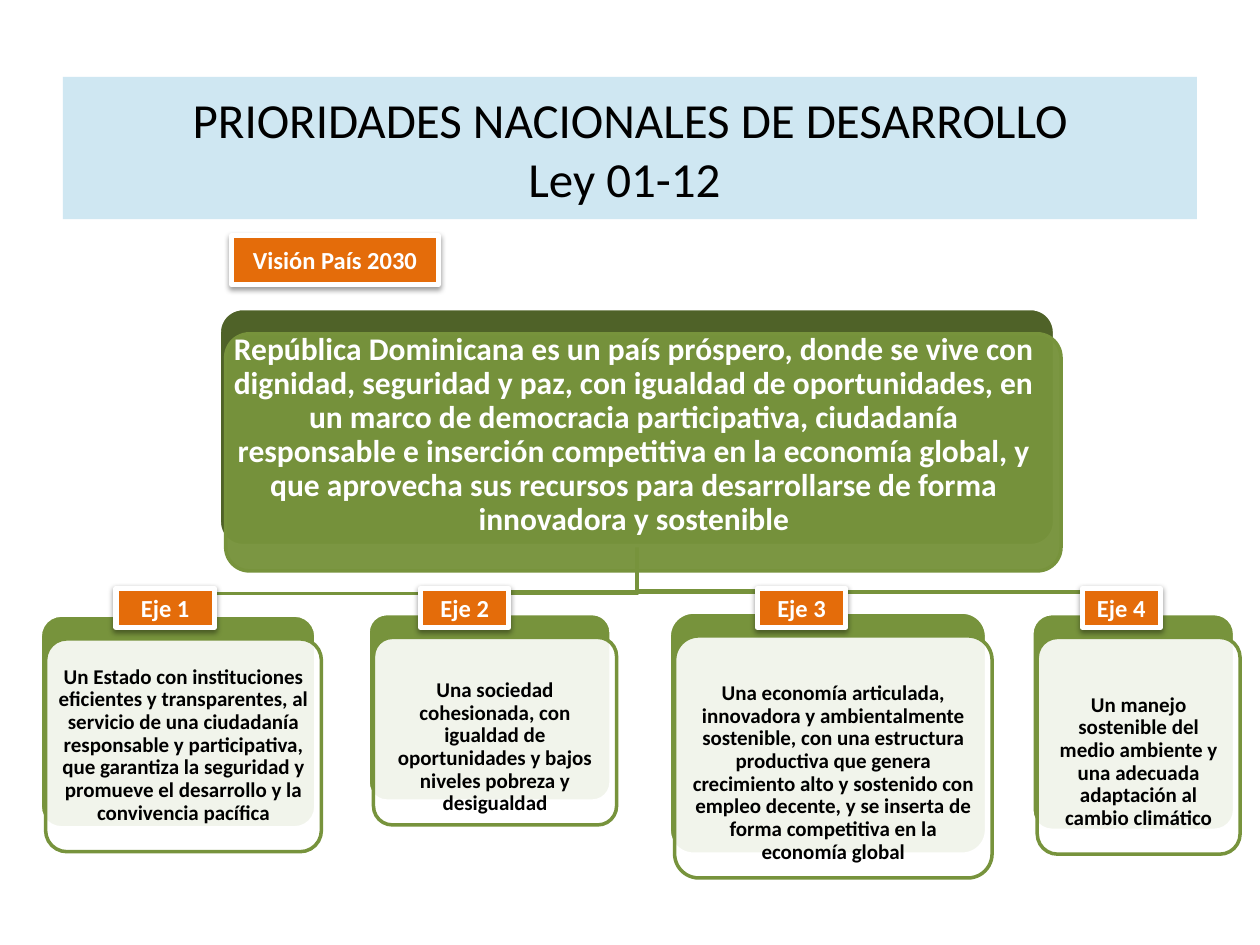
import lxml.etree
import pptx
import pptx.dml.color
import pptx.enum.shapes
import pptx.enum.text
import pptx.oxml.ns
import pptx.util

Cm = pptx.util.Cm
Pt = pptx.util.Pt
SHAPES = pptx.enum.shapes.MSO_SHAPE

# Content; boxes are (left, top, width, height) in cm
TITLE = ["PRIORIDADES NACIONALES DE DESARROLLO", "Ley 01-12 "]
TITLE_BOX = (1.27, 1.55, 22.86, 2.87)

VISION_LABEL = ("Visión País 2030", (4.67, 4.75, 4.17, 0.99))
VISION = (
    "República Dominicana es un país próspero, donde se vive con dignidad, "
    "seguridad y paz, con igualdad de oportunidades, en un marco de democracia "
    "participativa, ciudadanía responsable e inserción competitiva en la economía "
    "global, y que aprovecha sus recursos para desarrollarse de forma innovadora "
    "y sostenible"
)
VISION_BACK = (4.42, 6.22, 16.84, 4.78)
VISION_FRONT = (4.55, 6.73, 16.84, 4.78)
VISION_TEXT = (4.5, 6.53, 16.56, 4.5)

# drop: extra room above the text
AXES = [
    dict(label="Eje 1", label_x=2.34, label_width=1.98, box=(0.81, 12.4, 5.56, 4.29), drop=0,
         text="Un Estado con instituciones eficientes y transparentes, al servicio de una "
              "ciudadanía responsable y participativa, que garantiza la seguridad y "
              "promueve el desarrollo y la convivencia pacífica"),
    dict(label="Eje 2", label_x=8.48, label_width=1.78, box=(7.42, 12.37, 4.9, 3.78), drop=0.65,
         text="Una sociedad cohesionada, con igualdad de oportunidades y bajos niveles "
              "pobreza y desigualdad"),
    dict(label="Eje 3", label_x=15.27, label_width=1.78, box=(13.49, 12.34, 6.4, 4.88), drop=0.65,
         text="Una economía articulada, innovadora y ambientalmente sostenible, con una "
              "estructura productiva que genera crecimiento alto y sostenido con empleo "
              "decente, y se inserta de forma competitiva en la economía global"),
    dict(label="Eje 4", label_x=21.82, label_width=1.57, box=(20.8, 12.37, 4.09, 4.37), drop=0.65,
         text="Un manejo sostenible del medio ambiente y una adecuada adaptación al "
              "cambio climático"),
]
LABEL_TOP, LABEL_HEIGHT = 11.86, 0.79
FRONT_SHIFT = (0.11, 0.48)
CARD_INSET = 0.13
BEND_ABOVE_CARD = 0.43

# Formats
GREEN, DARK_GREEN, ORANGE, WHITE, BLACK = "77933C", "4F6228", "E46C0A", "FFFFFF", "000000"
TITLE_FONT = dict(name="Calibri", size=Pt(28))
VISION_FONT = dict(name="Calibri", size=Pt(18), bold=True)
CARD_FONT = dict(name="Calibri", size=Pt(12), bold=True)
LABEL_FONT = dict(name="Calibri", size=Pt(14), bold=True)
PLAIN_PARAGRAPH = dict(alignment=pptx.enum.text.PP_ALIGN.CENTER)
TIGHT_PARAGRAPH = dict(PLAIN_PARAGRAPH, line_spacing=0.9)


def color(value):
    return pptx.dml.color.RGBColor.from_string(value)


def apply(target, values):
    for name, value in values.items():
        setattr(target, name, value)


def add_alpha(color_element, percent):
    alpha = lxml.etree.SubElement(color_element, pptx.oxml.ns.qn("a:alpha"))
    alpha.set("val", str(percent * 1000))


def set_line(shape, value, width):
    shape.line.color.rgb = color(value)
    shape.line.width = Pt(width)


def write(shape, lines, font, text_color, paragraph_format, margins=None, wrap=True):
    frame = shape.text_frame
    apply(frame, dict(word_wrap=wrap, vertical_anchor=pptx.enum.text.MSO_ANCHOR.MIDDLE))
    apply(frame, margins or {})
    for index, line in enumerate(lines):
        paragraph = frame.add_paragraph() if index else frame.paragraphs[0]
        apply(paragraph, paragraph_format)
        run = paragraph.add_run()
        run.text = line
        apply(run.font, font)
        run.font.color.rgb = color(text_color)


def add_box(slide, kind, box, fill, line=None, width=2, opacity=100):
    shape = slide.shapes.add_shape(kind, *map(Cm, box))
    shape.shadow.inherit = False
    shape.fill.solid()
    shape.fill.fore_color.rgb = color(fill)
    if opacity < 100:
        fill_element = shape._element.spPr.find(pptx.oxml.ns.qn("a:solidFill"))
        add_alpha(fill_element[0], opacity)
    if line:
        set_line(shape, line, width)
    else:
        shape.line.fill.background()
    if kind == SHAPES.ROUNDED_RECTANGLE:
        shape.adjustments[0] = 0.1
    return shape


def add_rounded(slide, box, fill, line, opacity=100):
    return add_box(slide, SHAPES.ROUNDED_RECTANGLE, box, fill, line, 2, opacity)


def add_text(slide, box, text, font, text_color, margin, drop=0):
    margins = {f"margin_{side}": Cm(margin) for side in ("left", "right", "bottom")}
    margins["margin_top"] = Cm(margin + drop)
    shape = slide.shapes.add_textbox(*map(Cm, box))
    write(shape, [text], font, text_color, TIGHT_PARAGRAPH, margins)


def add_label(slide, text, box):
    shape = add_box(slide, SHAPES.RECTANGLE, box, ORANGE, WHITE, 3)
    effects = shape._element.spPr.find(pptx.oxml.ns.qn("a:effectLst"))
    shadow = lxml.etree.SubElement(effects, pptx.oxml.ns.qn("a:outerShdw"))
    for name, value in dict(blurRad=Pt(3.1), dist=Pt(1.6), dir=5400000, rotWithShape=0).items():
        shadow.set(name, str(int(value)))
    shade = lxml.etree.SubElement(shadow, pptx.oxml.ns.qn("a:srgbClr"))
    shade.set("val", BLACK)
    add_alpha(shade, 38)
    write(shape, [text], LABEL_FONT, WHITE, PLAIN_PARAGRAPH, wrap=False)


def add_branch(slide, start, end):
    bend = end[1] - BEND_ABOVE_CARD
    points = [(Cm(x), Cm(y)) for x, y in (start, (start[0], bend), (end[0], bend), end)]
    builder = slide.shapes.build_freeform(*points[0])
    builder.add_line_segments(points[1:], close=False)
    branch = builder.convert_to_shape()
    branch.shadow.inherit = False
    branch.fill.background()
    set_line(branch, GREEN, 2)


def main():
    presentation = pptx.Presentation()
    presentation.slide_width, presentation.slide_height = Cm(25.4), Cm(19.05)
    slide = presentation.slides.add_slide(presentation.slide_layouts[6])

    # Title band
    band = add_box(slide, SHAPES.RECTANGLE, TITLE_BOX, "CFE7F2")
    write(band, TITLE, TITLE_FONT, BLACK, PLAIN_PARAGRAPH)

    # Branches from the vision down to each axis
    left, top, width, height = VISION_BACK
    for axis in reversed(AXES):
        x, y, card_width, _ = axis["box"]
        add_branch(slide, (left + width / 2, top + height), (x + card_width / 2, y))

    # Back plates
    add_rounded(slide, VISION_BACK, DARK_GREEN, WHITE)
    for axis in AXES:
        add_rounded(slide, axis["box"], GREEN, WHITE)

    # Vision
    add_rounded(slide, VISION_FRONT, GREEN, GREEN, 97)
    add_text(slide, VISION_TEXT, VISION, VISION_FONT, WHITE, 0.18)

    # Axis cards
    for axis in AXES:
        x, y, width, height = axis["box"]
        x, y = x + FRONT_SHIFT[0], y + FRONT_SHIFT[1]
        add_rounded(slide, (x, y, width, height), WHITE, GREEN, 90)
        text_box = (x + CARD_INSET, y + CARD_INSET, width - 2 * CARD_INSET, height - 2 * CARD_INSET)
        add_text(slide, text_box, axis["text"], CARD_FONT, BLACK, 0.13, axis["drop"])

    # Orange labels
    add_label(slide, *VISION_LABEL)
    for axis in reversed(AXES):
        add_label(slide, axis["label"], (axis["label_x"], LABEL_TOP, axis["label_width"], LABEL_HEIGHT))

    presentation.save("out.pptx")


if __name__ == "__main__":
    main()
